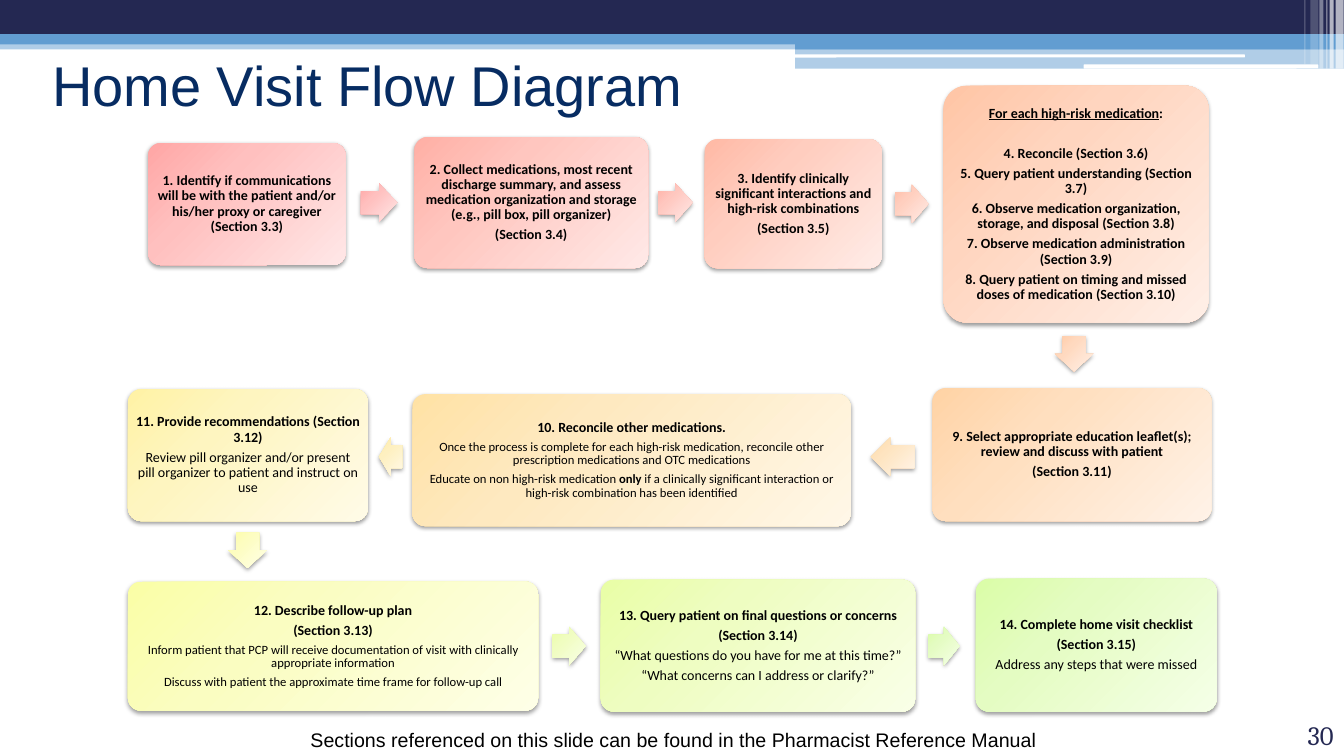
import copy
from dataclasses import dataclass
from typing import Any, NamedTuple

import pptx
import pptx.dml.color
import pptx.enum.shapes
import pptx.enum.text
import pptx.oxml
import pptx.oxml.ns
import pptx.util

Pt = pptx.util.Pt
Shape = pptx.enum.shapes.MSO_SHAPE
Align = pptx.enum.text.PP_ALIGN
Anchor = pptx.enum.text.MSO_ANCHOR
qn = pptx.oxml.ns.qn

COLOURS: dict[str, str] = {
    "navy": "242852", "blue": "629DD1", "white": "FFFFFF", "black": "000000", "title": "072C62",
}
# Start, 35 % and end colour of each step's gradient
GRADIENTS: dict[str, str] = {
    "1": "FFA6A5 FFC0BF FFE7E7", "2": "FFAFA5 FFC6BF FFE9E7", "3": "FFB9A5 FFCDBF FFECE7",
    "4": "FFC5A5 FFD5BF FFEFE7", "9": "FFD3A5 FFDFBF FFF2E7", "10": "FFE2A5 FEE9C0 FFF7E7",
    "11": "FFF2A5 FEF5C0 FFFBE7", "12": "FAFEA6 FAFDC1 FEFFE7", "13": "E9FEA6 EEFDC1 F9FFE7",
    "14": "DAFDA7 E4FCC2 F5FFE7",
    "1-2": "FFA6A5 FFC0BF FFE7E7", "2-3": "FFB0A5 FFC7BF FFE9E7", "3-4": "FFBCA5 FFCFBF FFECE7",
    "4-9": "FFCAA5 FFD9BF FFF0E7", "9-10": "FFDAA5 FEE4C0 FFF4E7", "10-11": "FFECA5 FEF0C0 FFF9E7",
    "11-12": "FEFEA6 FDFDC1 FFFFE7", "12-13": "EBFEA6 F0FDC1 F9FFE7", "13-14": "DAFDA7 E4FCC2 F5FFE7",
}
GRADIENT_STOPS = (0, 0.35, 1)
ARROW_HEIGHT = 27.4
PARA_GAP = 3.5
SHADOW = (
    f'<a:outerShdw {pptx.oxml.ns.nsdecls("a")} blurRad="{Pt(3.1)}" dist="{Pt(1.6)}" dir="5400000"'
    ' rotWithShape="0"><a:srgbClr val="000000"><a:alpha val="38000"/></a:srgbClr></a:outerShdw>'
)


class Frame(NamedTuple):
    left: float
    top: float
    width: float
    height: float


@dataclass
class Band:
    frame: Frame
    colour: str
    opacity: int = 100
    rounded: bool = False


@dataclass
class Span:
    text: str
    size: float = 10
    bold: bool = True
    underline: bool = False
    name: str = "Calibri"
    colour: str = "black"


@dataclass
class Para:
    spans: list[Span]
    gap: float = PARA_GAP


@dataclass
class Step:
    key: str
    frame: Frame
    paras: list[Para]


@dataclass
class Arrow:
    key: str
    left: float
    top: float
    width: float
    rotation: int = 0


def bold(*lines: str) -> list[Para]:
    return [Para([Span(line)]) for line in lines]


def plain(*lines: str, size: float = 10) -> list[Para]:
    return [Para([Span(line, size, False)]) for line in lines]


BANDS = [
    Band(Frame(0, 28.8, 960, 6.5), "blue", 50),
    Band(Frame(0, 0, 960, 24.5), "navy"),
    Band(Frame(0, 24.5, 960, 7.2), "blue"),
    Band(Frame(568, 28.1, 392, 7.2), "blue"),
    Band(Frame(568, 34.6, 392, 14.4), "blue", 50),
    Band(Frame(567.4, 38.9, 321.8, 2.2), "white", rounded=True),
    Band(Frame(774, 46.1, 167.8, 2.9), "white", rounded=True),
    Band(Frame(954, 0, 5.8, 49), "white", 65),
    Band(Frame(949.7, 0, 2.9, 49), "white", 65),
    Band(Frame(947.5, 0, 0.7, 49), "white", 60),
    Band(Frame(942.5, 0, 2.9, 49), "white", 40),
    Band(Frame(936, 0, 5.8, 46.1), "white", 20),
    Band(Frame(931.7, 0, 0.7, 46.1), "white", 30),
]
STEPS = [
    Step("1", Frame(105.8, 102.2, 141.1, 87.1), bold(
        "1. Identify if communications will be with the patient and/or his/her proxy or caregiver (Section 3.3)")),
    Step("2", Frame(295.9, 97.9, 167, 93.6), bold(
        "2. Collect medications, most recent discharge summary, and assess medication organization "
        "and storage (e.g., pill box, pill organizer)", "(Section 3.4)")),
    Step("3", Frame(503.3, 99.4, 126.7, 92.2), bold(
        "3. Identify clinically significant interactions and high-risk combinations", "(Section 3.5)")),
    Step("4", Frame(673.9, 61.2, 189.4, 169.2), [
        Para([Span("For each high-risk medication", underline=True), Span(":")], gap=18),
        *bold("4. Reconcile (Section 3.6)", "5. Query patient understanding (Section 3.7)",
              "6. Observe medication organization, storage, and disposal (Section 3.8)",
              "7. Observe medication administration (Section 3.9)",
              "8. Query patient on timing and missed doses of medication (Section 3.10)")]),
    Step("9", Frame(666, 277.2, 199.4, 95), bold(
        "9. Select appropriate education leaflet(s); review and discuss with patient", "(Section 3.11)")),
    Step("10", Frame(294.5, 281.5, 313.2, 94.3), [
        *bold("10. Reconcile other medications."),
        *plain("Once the process is complete for each high-risk medication, reconcile other "
               "prescription medications and OTC medications", size=9),
        Para([Span("Educate on non high-risk medication ", 9, False), Span("only", 9),
              Span(" if a clinically significant interaction or high-risk combination has been identified",
                   9, False)])]),
    Step("11", Frame(91.4, 277.9, 171.4, 94.3), [
        *bold("11. Provide recommendations (Section 3.12)"),
        *plain("Review pill organizer and/or present pill organizer to patient and instruct on use")]),
    Step("12", Frame(91.4, 415.4, 293, 92.2), [
        *bold("12. Describe follow-up plan", "(Section 3.13)"),
        *plain("Inform patient that PCP will receive documentation of visit with clinically appropriate information",
               "Discuss with patient the approximate time frame for follow-up call", size=9)]),
    Step("13", Frame(429.1, 414, 224.6, 94.3), [
        *bold("13. Query patient on final questions or concerns", "(Section 3.14)"),
        *plain("“What questions do you have for me at this time?”", "“What concerns can I address or clarify?”")]),
    Step("14", Frame(697, 413.3, 172.1, 95), [
        *bold("14. Complete home visit checklist", "(Section 3.15)"),
        *plain("Address any steps that were missed")]),
]
ARROWS = [
    Arrow("1-2", 257.8, 131, 25.9), Arrow("2-3", 470.2, 131, 24.5), Arrow("3-4", 639.4, 131.8, 23.8),
    Arrow("4-9", 754.6, 239, 25.2, 90), Arrow("9-10", 622.1, 312.5, 31, 180),
    Arrow("10-11", 270.7, 312.5, 16.6, 180), Arrow("11-12", 164.2, 379.4, 25.2, 90),
    Arrow("12-13", 394.6, 447.8, 23.8), Arrow("13-14", 663.1, 447.8, 22.3),
]


def set_all(target: Any, values: dict[str, Any]) -> None:
    for name, value in values.items():
        setattr(target, name, value)


def rgb(value: str) -> pptx.dml.color.RGBColor:
    return pptx.dml.color.RGBColor.from_string(value)


def add_plain_shape(page: Any, kind: Any, frame: Frame) -> Any:
    """Add a preset shape without outline or theme shadow."""
    shape = page.shapes.add_shape(kind, *map(Pt, frame))
    shape.shadow.inherit = False
    shape.line.fill.background()
    return shape


def add_band(page: Any, band: Band) -> None:
    shape = add_plain_shape(page, Shape.ROUNDED_RECTANGLE if band.rounded else Shape.RECTANGLE, band.frame)
    shape.fill.solid()
    shape.fill.fore_color.rgb = rgb(COLOURS[band.colour])
    if band.opacity < 100:
        colour = shape.element.spPr.find(".//" + qn("a:srgbClr"))
        pptx.oxml.ns  # namespace helpers come with the module
        colour.append(pptx.oxml.parse_xml(
            f'<a:alpha {pptx.oxml.ns.nsdecls("a")} val="{band.opacity * 1000}"/>'))


def add_gradient_shape(page: Any, kind: Any, frame: Frame, key: str) -> Any:
    """Add a shape with a three-stop diagonal gradient and a soft shadow below."""
    shape = add_plain_shape(page, kind, frame)
    shape.fill.gradient()
    shape.fill.gradient_angle = 315
    properties = shape.element.spPr
    properties.find(qn("a:gradFill")).set("rotWithShape", "0")
    stops = properties.find(".//" + qn("a:gsLst"))
    stops.insert(1, copy.deepcopy(stops[0]))
    for stop, position, value in zip(shape.fill.gradient_stops, GRADIENT_STOPS, GRADIENTS[key].split()):
        stop.position = position
        stop.color.rgb = rgb(value)
    properties.find(qn("a:effectLst")).append(pptx.oxml.parse_xml(SHADOW))
    return shape


def write(box: Any, paras: list[Para], anchor: Any, para_format: dict[str, Any],
          margins: tuple[float, float] = (7.2, 3.6)) -> None:
    across, down = map(Pt, margins)
    frame = box.text_frame
    set_all(frame, {"word_wrap": True, "vertical_anchor": anchor, "margin_left": across,
                    "margin_right": across, "margin_top": down, "margin_bottom": down})
    for index, item in enumerate(paras):
        para = frame.add_paragraph() if index else frame.paragraphs[0]
        set_all(para, {**para_format, "space_after": Pt(item.gap)})
        for span in item.spans:
            run = para.add_run()
            run.text = span.text
            set_all(run.font, {"size": Pt(span.size), "bold": span.bold, "underline": span.underline,
                               "name": span.name})
            run.font.color.rgb = rgb(COLOURS[span.colour])


def add_label(page: Any, frame: Frame, span: Span, anchor: Any, alignment: Any) -> None:
    box = page.shapes.add_textbox(*map(Pt, frame))
    write(box, [Para([span], gap=0)], anchor, {"alignment": alignment})


def add_step(page: Any, step: Step) -> None:
    box = add_gradient_shape(page, Shape.ROUNDED_RECTANGLE, step.frame, step.key)
    box.adjustments[0] = 0.1
    write(box, step.paras, Anchor.MIDDLE, {"alignment": Align.CENTER, "line_spacing": 0.9}, (3, 3))


def add_arrow(page: Any, arrow: Arrow) -> None:
    frame = Frame(arrow.left, arrow.top, arrow.width, ARROW_HEIGHT)
    shape = add_gradient_shape(page, Shape.RIGHT_ARROW, frame, arrow.key)
    shape.adjustments[0] = 0.6
    shape.rotation = arrow.rotation


def main() -> None:
    deck = pptx.Presentation()
    set_all(deck, {"slide_width": Pt(960), "slide_height": Pt(540)})
    page = deck.slides.add_slide(deck.slide_layouts[6])
    for band in BANDS:
        add_band(page, band)
    add_label(page, Frame(30.2, 18, 768.2, 84.2),
              Span("Home Visit Flow Diagram", 40, False, name="Arial", colour="title"), Anchor.MIDDLE, Align.LEFT)
    add_label(page, Frame(879.8, 511.2, 79.9, 28.8),
              Span("30", 19, False, name="Cambria", colour="navy"), Anchor.BOTTOM, Align.RIGHT)
    for step in STEPS:
        add_step(page, step)
    for arrow in ARROWS:
        add_arrow(page, arrow)
    add_label(page, Frame(50.4, 516.2, 861.8, 24.5),
              Span("Sections referenced on this slide can be found in the Pharmacist Reference Manual",
                   14, False, name="Arial"), Anchor.TOP, Align.CENTER)
    deck.save("out.pptx")


if __name__ == "__main__":
    main()
